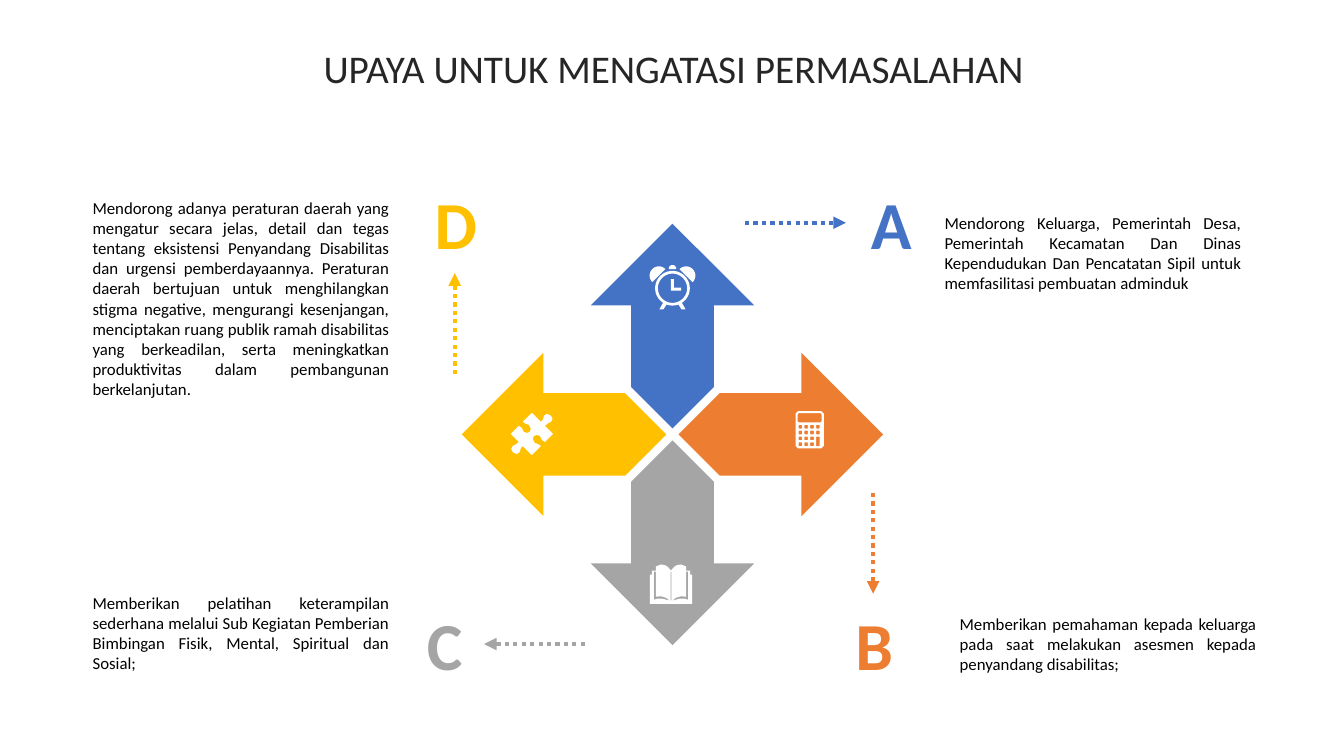
"""Build a slide of four arrows, each leading to a lettered remedy."""
import math

import lxml.etree
import pptx
import pptx.dml.color
import pptx.enum.dml
import pptx.enum.shapes
import pptx.enum.text
import pptx.oxml.ns
import pptx.util

THEME = {
    "font": "Calibri",
    "blue": "4472C4", "orange": "ED7D31", "gray": "A5A5A5", "gold": "FFC000",
    "white": "FFFFFF", "black": "000000", "dark": "262626",
    "title": 28, "letter": 48, "body": 12, "line": 3,
}
ALIGN = pptx.enum.text.PP_ALIGN
ANCHOR = pptx.enum.text.MSO_ANCHOR
RGB = pptx.dml.color.RGBColor.from_string

deck = pptx.Presentation()
deck.slide_width = pptx.util.Inches(13.33)
deck.slide_height = pptx.util.Inches(7.5)
CELL = deck.slide_height / 75
slide = deck.slides.add_slide(deck.slide_layouts[6])
shapes = slide.shapes


def draw(rings, hue, x=0, y=0):
    """Fill closed rings of grid points, moved by x and y; inner rings cut holes."""
    rings = [[((x + a) * 100, (y + b) * 100) for a, b in ring] for ring in rings]
    pen = shapes.build_freeform(*rings[0][0], scale=CELL / 100)
    for ring in rings:
        if ring is not rings[0]:
            pen.move_to(*ring[0])
        pen.add_line_segments(ring[1:], close=True)
    form = pen.convert_to_shape()
    form.shadow.inherit = False
    form.fill.solid()
    form.fill.fore_color.rgb = RGB(THEME[hue])
    form.line.fill.background()


def write(text, area, size, hue, align, inset=(1, 0.5, 1, 0.5), anchor=ANCHOR.TOP):
    """Place one paragraph in an area given in grid cells."""
    box = shapes.add_textbox(*[round(n * CELL) for n in area])
    frame = box.text_frame
    frame.word_wrap = True
    frame.vertical_anchor = anchor
    frame.margin_left, frame.margin_top, frame.margin_right, frame.margin_bottom = [
        round(n * CELL) for n in inset]
    para = frame.paragraphs[0]
    para.text = text
    para.alignment = align
    para.font.name = THEME["font"]
    para.font.size = pptx.util.Pt(THEME[size])
    para.font.color.rgb = RGB(THEME[hue])
    return para


title = write("UPAYA UNTUK MENGATASI PERMASALAHAN", (3.5, 3.1, 126.6, 7.9),
              "title", "dark", ALIGN.CENTER, anchor=ANCHOR.MIDDLE)
title.line_spacing = 0.9
title.space_before = pptx.util.Pt(10)

MID = (66.7, 43.1)
side = [(0.6, 0), (4.3, 3.7), (4.7, 4.1), (12.8, 4.1), (12.8, 8.1), (20.9, 0)]
arrow = side + [(a, -b) for a, b in side[-2:0:-1]]
for hue, dx, dy in [("gray", 0, 1), ("gold", -1, 0), ("orange", 1, 0), ("blue", 0, -1)]:
    draw([[(a * dx - b * dy, a * dy + b * dx) for a, b in arrow]], hue, *MID)

LEAD = 10
items = [
    ("A", "blue", (83.9, 18.1), (73.9, 22.1), (1, 0), (92.7, 20.6, 31.4, 9.1),
     "Mendorong Keluarga, Pemerintah Desa, Pemerintah Kecamatan Dan Dinas "
     "Kependudukan Dan Pencatatan Sipil untuk memfasilitasi pembuatan adminduk"),
    ("B", "orange", (82.2, 59.9), (86.6, 48.9), (0, 1), (94.2, 60.4, 31.4, 7.1),
     "Memberikan pemahaman kepada keluarga pada saat melakukan asesmen kepada "
     "penyandang disabilitas;"),
    ("C", "gray", (39.6, 59.9), (58, 63.9), (-1, 0), (8.2, 58.3, 31.4, 9.1),
     "Memberikan pelatihan keterampilan sederhana melalui Sub Kegiatan Pemberian "
     "Bimbingan Fisik, Mental, Spiritual dan Sosial;"),
    ("D", "gold", (40.7, 18.1), (45.1, 37.1), (0, -1), (8.2, 19.1, 31.4, 21.2),
     "Mendorong adanya peraturan daerah yang mengatur secara jelas, detail dan tegas "
     "tentang eksistensi Penyandang Disabilitas dan urgensi pemberdayaannya. "
     "Peraturan daerah bertujuan untuk menghilangkan stigma negative, mengurangi "
     "kesenjangan, menciptakan ruang publik ramah disabilitas yang berkeadilan, "
     "serta meningkatkan produktivitas dalam pembangunan berkelanjutan."),
]
for letter, hue, spot, (x, y), (dx, dy), area, text in items:
    mark = write(letter, (*spot, 8.8, 8.1), "letter", hue, ALIGN.CENTER, (0.5, 0, 0.3, 0))
    mark.font.bold = True
    ends = (x, y, x + dx * LEAD, y + dy * LEAD)
    lead = shapes.add_connector(pptx.enum.shapes.MSO_CONNECTOR.STRAIGHT,
                                *[round(n * CELL) for n in ends])
    lead.line.color.rgb = RGB(THEME[hue])
    lead.line.width = pptx.util.Pt(THEME["line"])
    lead.line.dash_style = pptx.enum.dml.MSO_LINE.ROUND_DOT
    tail = lxml.etree.SubElement(lead.line._get_or_add_ln(), pptx.oxml.ns.qn("a:tailEnd"))
    tail.set("type", "triangle")
    lxml.etree.SubElement(lead._element.spPr, pptx.oxml.ns.qn("a:effectLst"))
    write(text, area, "body", "black", ALIGN.JUSTIFY)

turn = [math.radians(n) for n in range(0, 360, 6)]
clock = [[(r * math.cos(t), r * math.sin(t)) for t in turn] for r in (1.72, 1.45)]
clock += [
    [(-0.15, -0.9), (0.15, -0.9), (0.15, -0.05), (0.85, -0.05), (0.85, 0.25), (-0.15, 0.25)],
    [(-0.35, -1.9), (0.35, -1.9), (0.35, -2.1), (0.15, -2.3), (-0.15, -2.3), (-0.35, -2.1)],
]
bell = [(-1.35 + 0.92 * math.cos(math.radians(n)), -1.25 + 0.92 * math.sin(math.radians(n)))
        for n in range(135, 316, 10)]
leg = [(-0.95, 1.47), (-0.6, 1.63), (-0.9, 2.1), (-1.3, 2.1)]
for part in (bell, leg):
    clock += [part, [(-a, b) for a, b in part]]
draw(clock, "white", MID[0], 28.6)

KEY, STEP = 0.36, 0.58
plates = [(0, 0, 2.8, 3.7, 0.25), (0.2, 0.2, 2.4, 0.9, 0.12)]
for col in range(4):
    for row in range(4):
        if (col, row) != (3, 3):
            tall = KEY + STEP if (col, row) == (3, 2) else KEY
            plates.append((0.3 + col * STEP, 1.36 + row * STEP, KEY, tall, 0.05))
pad = [[(x + c, y), (x + w - c, y), (x + w, y + c), (x + w, y + h - c),
        (x + w - c, y + h), (x + c, y + h), (x, y + h - c), (x, y + c)]
       for x, y, w, h, c in plates]
draw(pad, "white", 78.9, 40.8)

half = [(0.9, -1.2), (1.1, -1.4), (1.2, -1.8), (1.5, -2), (1.9, -1.8), (2.05, -1.5),
        (1.9, -1.2), (1.6, -1.05), (1.3, -0.8), (2.1, 0), (1.3, 0.8), (1, 0.6),
        (0.8, 0.2), (0.5, 0.1), (0.2, 0.2), (0.1, 0.5), (0.3, 0.9), (0.6, 1),
        (0.9, 1.2), (0, 2.1)]
draw([half + [(-a, -b) for a, b in half]], "white", 52.75, 43.05)

cover = [(0, 0.6), (0.3, 0.25), (0.6, 0.06), (1, 0), (1.5, 0.2), (1.5, 0.6), (1.9, 0.6),
         (1.9, 1), (2.1, 1), (2.1, 3.9)]
fold = [(1.5, 0.7), (1.7, 0.7), (1.7, 3.5), (1.3, 3.38), (0.9, 3.38), (0.1, 3.6),
        (0.5, 3.3), (1, 3.15), (1.5, 3.2)]
spine = [(-0.04, 0.7), (0.04, 0.7), (0.04, 3.55), (-0.04, 3.55)]
book = [cover + [(-a, b) for a, b in cover[:0:-1]], fold, [(-a, b) for a, b in fold], spine]
draw(book, "white", 66.55, 56)

deck.save("out.pptx")
